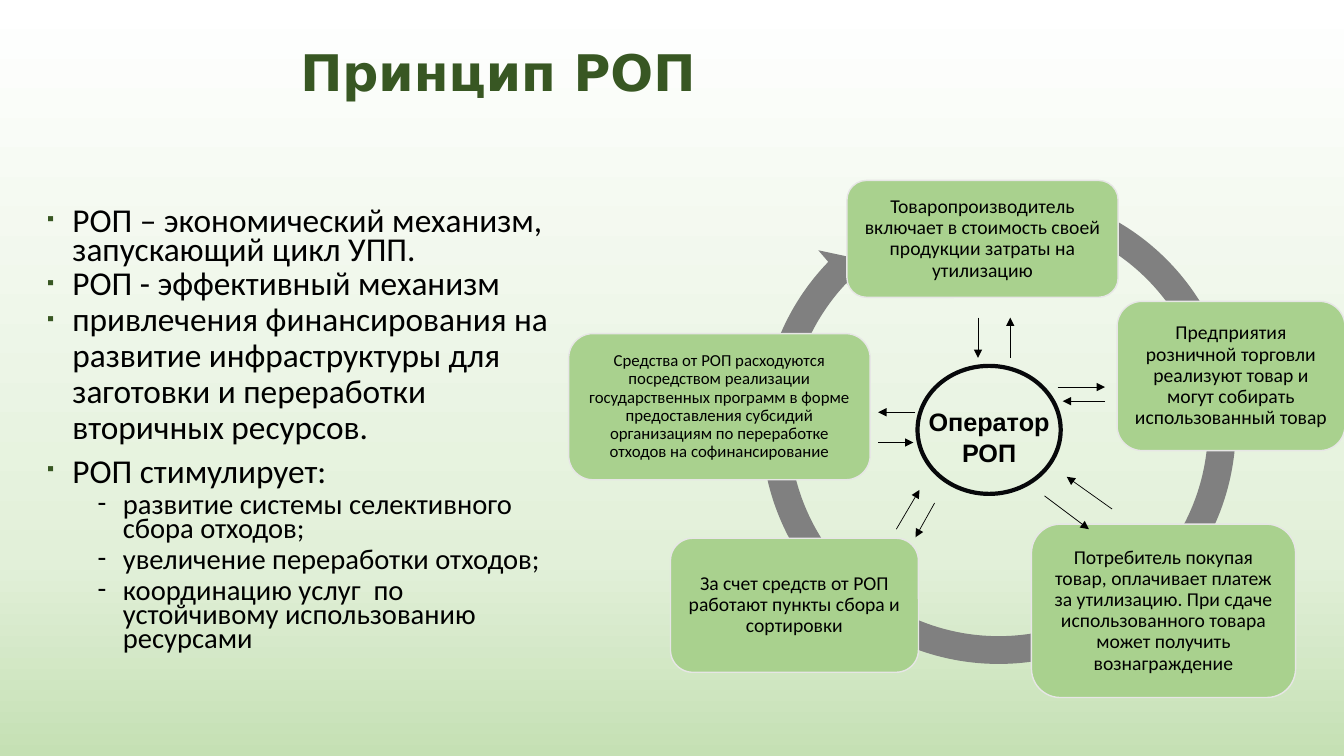
from lxml import etree
from pptx import Presentation
from pptx.dml.color import RGBColor
from pptx.enum.shapes import MSO_CONNECTOR, MSO_SHAPE
from pptx.enum.text import MSO_ANCHOR, PP_ALIGN
from pptx.oxml.ns import qn
from pptx.util import Pt

PX = 9144  # EMU per px, 100 px to the inch
STRAIGHT = MSO_CONNECTOR.STRAIGHT
ROUND_RECT = MSO_SHAPE.ROUNDED_RECTANGLE
ELLIPSE = MSO_SHAPE.OVAL
CIRCULAR_ARROW = MSO_SHAPE.CIRCULAR_ARROW
CENTER = PP_ALIGN.CENTER
MIDDLE, TOP = MSO_ANCHOR.MIDDLE, MSO_ANCHOR.TOP

GREEN, BLACK = "385723", "000000"
BACKGROUND = [(0, "FFFFFF"), (74, "E2F0D9"), (100, "C5E0B4")]

# text, line spacing, space before
THESES = [
    ("РОП – экономический механизм, запускающий цикл УПП.", 0.7, 10),
    ("РОП - эффективный механизм", 0.9, 0),
    ("привлечения финансирования на развитие инфраструктуры для заготовки "
     "и переработки вторичных ресурсов.", 0.9, 0),
    ("РОП стимулирует:", 0.7, 10),
]
GOALS = [
    "развитие системы селективного сбора отходов;",
    "увеличение переработки отходов;",
    "координацию услуг  по устойчивому использованию ресурсами",
]
# box, text, size, inset
STAGES = [
    ((840, 179, 269, 116), "Товаропроизводитель включает в стоимость своей "
     "продукции затраты на утилизацию", 14, 6),
    ((1108, 299, 226, 148), "Предприятия розничной торговли реализуют товар "
     "и могут собирать использованный товар", 14, 6),
    ((1023, 520, 262, 172), "Потребитель покупая товар, оплачивает платеж за "
     "утилизацию. При сдаче использованного товара может получить "
     "вознаграждение", 14, 6),
    ((665, 534, 246, 133), "За счет средств от РОП работают пункты сбора и "
     "сортировки", 14, 6),
    ((564, 331, 299, 145), "Средства от РОП расходуются посредством реализации "
     "государственных программ в форме предоставления субсидий организациям "
     "по переработке отходов на софинансирование", 12, 5),
]
EXCHANGES = [
    (970, 315, 970, 355), (1002, 355, 1002, 315),
    (908, 409, 871, 409), (871, 439, 906, 439),
    (889, 525, 912, 486), (927, 499, 908, 533),
    (1049, 384, 1096, 384), (1096, 398, 1054, 398),
    (1103, 505, 1058, 473), (1036, 492, 1080, 525),
]


def rgb(color):
    return RGBColor.from_string(color)


def emu(*lengths):
    return [n * PX for n in lengths]


class Deck:
    def __init__(self, width, height):
        self.prs = Presentation()
        self.prs.slide_width, self.prs.slide_height = emu(width, height)
        self.s = self.prs.slides.add_slide(self.prs.slide_layouts[6])

    def background(self, stops):
        fill = self.s.background.fill
        fill.gradient()
        fill.gradient_angle = 270
        gs_list = self.s._element.find(".//" + qn("a:gsLst"))
        for gs in list(gs_list):
            gs_list.remove(gs)
        for percent, color in stops:
            gs = etree.SubElement(gs_list, qn("a:gs"), pos=str(percent * 1000))
            etree.SubElement(gs, qn("a:srgbClr"), val=color)

    def style(self, p, size, color=BLACK, font="Calibri", bold=False):
        for r in p.runs:
            r.font.size, r.font.name, r.font.bold = Pt(size), font, bold
            r.font.color.rgb = rgb(color)

    def textbox(self, box, anchor=TOP):
        tf = self.s.shapes.add_textbox(*emu(*box)).text_frame
        tf.word_wrap = True
        tf.vertical_anchor = anchor
        return tf

    def bullet(self, p, char, left, color=BLACK, percent=100):
        """Hang a bullet 25 px to the left of the text."""
        pPr = p._p.get_or_add_pPr()
        pPr.set("marL", str(left * PX))
        pPr.set("indent", str(-25 * PX))
        bu_color = etree.SubElement(pPr, qn("a:buClr"))
        etree.SubElement(bu_color, qn("a:srgbClr"), val=color)
        etree.SubElement(pPr, qn("a:buSzPct"), val=str(percent * 1000))
        etree.SubElement(pPr, qn("a:buFont"), typeface="Calibri")
        etree.SubElement(pPr, qn("a:buChar"), char=char)

    def shape(self, kind, box, fill=None, line=None, width=1):
        sp = self.s.shapes.add_shape(kind, *emu(*box))
        sp.shadow.inherit = False
        if fill:
            sp.fill.solid()
            sp.fill.fore_color.rgb = rgb(fill)
        else:
            sp.fill.background()
        if line:
            sp.line.color.rgb = rgb(line)
            sp.line.width = Pt(width)
        else:
            sp.line.fill.background()
        return sp

    def label(self, sp, text, size, insets, spacing=1.0, wrap=True, **look):
        """Centre text in a shape; insets are left, top, right, bottom."""
        tf = sp.text_frame
        tf.text = text
        tf.word_wrap = wrap
        tf.vertical_anchor = MIDDLE
        (tf.margin_left, tf.margin_top,
         tf.margin_right, tf.margin_bottom) = emu(*insets)
        for p in tf.paragraphs:
            p.alignment, p.line_spacing = CENTER, spacing
            self.style(p, size, **look)

    def arrow(self, ends):
        line = self.s.shapes.add_connector(STRAIGHT, *emu(*ends))
        line.line.color.rgb = rgb(BLACK)
        line.line.width = Pt(0.5)
        etree.SubElement(line.line._get_or_add_ln(), qn("a:tailEnd"),
                         type="triangle")
        etree.SubElement(line._element.spPr, qn("a:effectLst"))


def main():
    deck = Deck(1333, 750)
    deck.background(BACKGROUND)

    title = deck.textbox((288, 30, 661, 90), MIDDLE)
    title.text = "Принцип РОП"
    title.paragraphs[0].line_spacing = 0.9
    deck.style(title.paragraphs[0], 36, GREEN, "DejaVu Sans", True)

    body = deck.textbox((37, 204, 518, 491))
    rows = THESES + [(goal, 0.7, 5) for goal in GOALS]
    body.text = "\n".join(text for text, _, _ in rows)
    for i, (p, (_, spacing, before)) in enumerate(zip(body.paragraphs, rows)):
        p.line_spacing, p.space_before = spacing, Pt(before)
        if i < len(THESES):
            deck.bullet(p, "▪", 25, GREEN, 60)
            deck.style(p, 23.8)
        else:
            p.level = 1
            deck.bullet(p, "-", 75)
            deck.style(p, 20.4)

    cycle = deck.shape(CIRCULAR_ARROW, (740, 173, 501, 501), "808080")
    for i, value in enumerate((0.055, 3.307, 134.257, 176.03, 0.058)):
        cycle.adjustments[i] = value

    for box, text, size, inset in STAGES:
        stage = deck.shape(ROUND_RECT, box, "A9D18E", "E7E6E6")
        deck.label(stage, text, size, [inset] * 4, 0.9)

    operator = deck.shape(ELLIPSE, (910, 363, 142, 127), None, "07080B", 3)
    deck.label(operator, "Оператор\nРОП", 18, (0, 14, 0, 0), wrap=False,
               font="Arial", bold=True)

    for ends in EXCHANGES:
        deck.arrow(ends)

    deck.prs.save("out.pptx")


if __name__ == "__main__":
    main()
